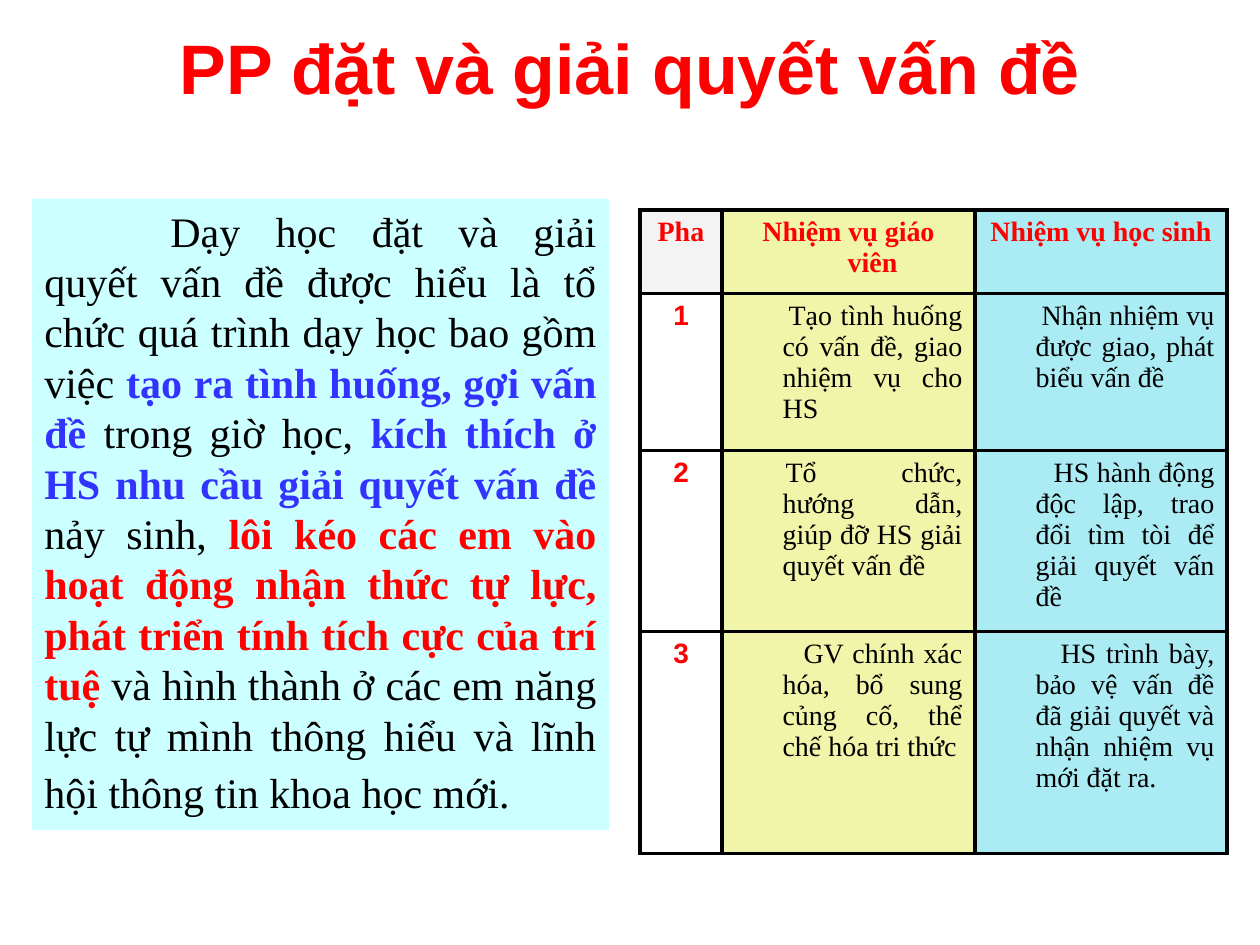
from lxml.etree import SubElement
from pptx import Presentation
from pptx.dml.color import RGBColor
from pptx.enum.shapes import MSO_SHAPE as Shape
from pptx.enum.text import MSO_ANCHOR as Anchor, PP_ALIGN as Align
from pptx.oxml.ns import qn
from pptx.util import Emu, Pt

SCALE = 914400 / 126
SERIF, SANS = "Times New Roman", "Arial"
RED, BLUE, BLACK = "FF0000", "3333FF", "000000"
COLUMN_WIDTHS = [82, 253, 252]
ROW_HEIGHTS = [84, 157, 181, 222]
COLUMN_FILLS = [None, "F0F5A9", "AAEBF4"]
HEADINGS = ["Pha", "Nhiệm vụ giáo viên", "Nhiệm vụ học sinh"]
PHASES = [
    [("Tạo tình huống có vấn đề, giao nhiệm vụ cho HS", 6),
     ("Nhận nhiệm vụ được giao, phát biểu vấn đề", 6)],
    [("Tổ chức, hướng dẫn, giúp đỡ HS giải quyết vấn đề", 3),
     ("HS hành động độc lập, trao đổi tìm tòi để giải quyết vấn đề", 18)],
    [("GV chính xác hóa, bổ sung củng cố, thể chế hóa tri thức", 21),
     ("HS trình bày, bảo vệ vấn đề đã giải quyết và nhận nhiệm vụ mới đặt ra.", 25)],
]
DEFINITION = [
    ("Dạy học đặt và giải quyết vấn đề được hiểu là tổ chức quá trình dạy học bao gồm việc ", BLACK, 24),
    ("tạo ra tình huống, gợi vấn đề", BLUE, 24),
    (" trong giờ học, ", BLACK, 24),
    ("kích thích ở HS nhu cầu giải quyết vấn đề", BLUE, 24),
    (" nảy sinh, ", BLACK, 24),
    ("lôi kéo các em vào hoạt động nhận thức tự lực, phát triển tính tích cực của trí tuệ", RED, 24),
    (" và hình thành ở các em năng lực tự mình thông hiểu và lĩnh hội thông tin khoa học mới.", BLACK, 24),
    (" ", BLACK, 28),
]


def px(length):
    """Turn pixels into EMU."""
    return Emu(round(length * SCALE))


def color(value):
    """Turn a hex string into a colour."""
    return RGBColor.from_string(value)


def style(run, face, size, ink, bold):
    """Format one run."""
    font = run.font
    font.name, font.size, font.bold = face, Pt(size), bold
    font.color.rgb = color(ink)


def indent(paragraph, left, first):
    """Set the left margin and the first-line indent."""
    properties = paragraph._p.get_or_add_pPr()
    properties.set("marL", str(px(left)))
    properties.set("indent", str(px(first)))


def add_title(slide, box, words):
    """Place the centred heading."""
    frame = slide.shapes.add_textbox(*map(px, box)).text_frame
    frame.word_wrap = True
    frame.vertical_anchor = Anchor.MIDDLE
    heading = frame.paragraphs[0]
    heading.text = words
    heading.alignment = Align.CENTER
    style(heading.runs[0], SANS, 40, RED, True)


def add_definition(slide, box, parts):
    """Place the tinted panel with its emphasised phrases."""
    panel = slide.shapes.add_shape(Shape.RECTANGLE, *map(px, box))
    panel.shadow.inherit = False
    panel.fill.solid()
    panel.fill.fore_color.rgb = color("CCFFFF")
    panel.line.fill.background()
    frame = panel.text_frame
    frame.word_wrap = True
    frame.vertical_anchor = Anchor.TOP
    passage = frame.paragraphs[0]
    passage.alignment = Align.JUSTIFY
    indent(passage, 0, 126)
    for words, ink, size in parts:
        run = passage.add_run()
        run.text = words
        style(run, SERIF, size, ink, ink != BLACK)


def add_borders(cell):
    """Draw black lines on the four sides of a cell."""
    properties = cell._tc.get_or_add_tcPr()
    for position, side in enumerate(("lnL", "lnR", "lnT", "lnB")):
        line = SubElement(properties, qn(f"a:{side}"), w=str(Pt(2)))
        properties.insert(position, line)
        fill = SubElement(line, qn("a:solidFill"))
        SubElement(fill, qn("a:srgbClr"), val=BLACK)


def fill_cell(cell, words, tint, face=SERIF, first=None):
    """Write a centred label, or a justified task if first is given."""
    is_label = first is None
    cell.text_frame.text = words
    entry = cell.text_frame.paragraphs[0]
    entry.alignment = Align.CENTER if is_label else Align.JUSTIFY
    indent(entry, 48, -48 if is_label else first)
    style(entry.runs[0], face, 16, RED if is_label else BLACK, is_label)
    if tint:
        cell.fill.solid()
        cell.fill.fore_color.rgb = color(tint)
    else:
        cell.fill.background()
    add_borders(cell)


def add_phases(slide, left, top):
    """Place the table of teacher and student tasks."""
    box = (left, top, sum(COLUMN_WIDTHS), sum(ROW_HEIGHTS))
    table = slide.shapes.add_table(len(ROW_HEIGHTS), len(COLUMN_WIDTHS), *map(px, box)).table
    table.first_row = table.horz_banding = False
    for column, width in zip(table.columns, COLUMN_WIDTHS):
        column.width = px(width)
    for row, height in zip(table.rows, ROW_HEIGHTS):
        row.height = px(height)
    for column, heading in enumerate(HEADINGS):
        fill_cell(table.cell(0, column), heading, COLUMN_FILLS[column] or "F3F3F3")
    for phase, tasks in enumerate(PHASES, 1):
        fill_cell(table.cell(phase, 0), str(phase), COLUMN_FILLS[0], SANS)
        for column, (task, first) in enumerate(tasks, 1):
            fill_cell(table.cell(phase, column), task, COLUMN_FILLS[column], first=first)


def main():
    """Build and save the slide."""
    deck = Presentation()
    deck.slide_width, deck.slide_height = px(1260), px(945)
    slide = deck.slides.add_slide(deck.slide_layouts[6])
    add_title(slide, (63, 26, 1134, 81), "PP đặt và giải quyết vấn đề")
    add_phases(slide, 640, 210)
    add_definition(slide, (32, 199, 577, 631), DEFINITION)
    deck.save("out.pptx")


if __name__ == "__main__":
    main()
